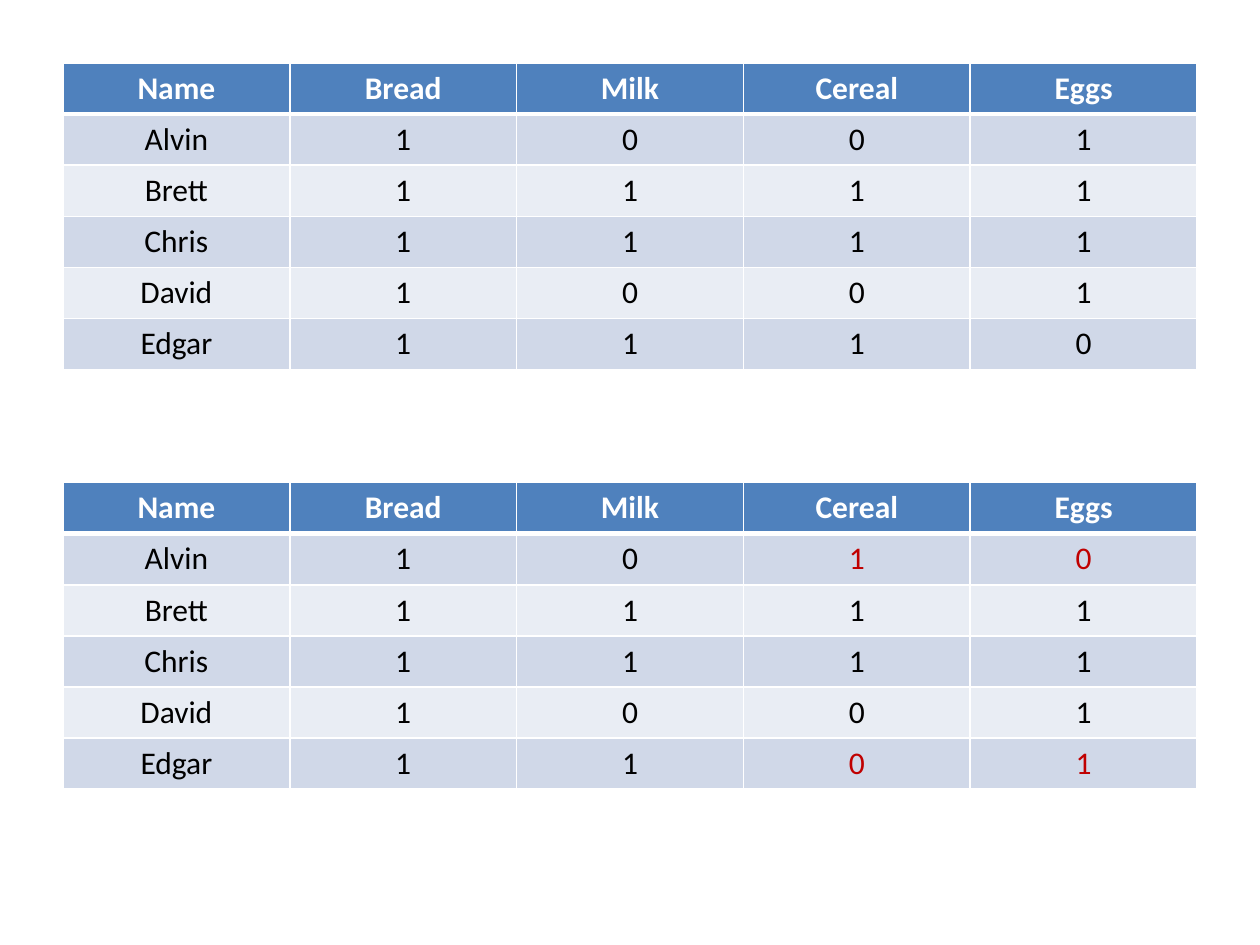
import pptx
import pptx.dml.color
import pptx.enum.text
import pptx.oxml.ns
import pptx.util
from lxml import etree

HEADINGS = ["Name", "Bread", "Milk", "Cereal", "Eggs"]
PURCHASES = [
    ["Alvin", "1", "0", "0", "1"],
    ["Brett", "1", "1", "1", "1"],
    ["Chris", "1", "1", "1", "1"],
    ["David", "1", "0", "0", "1"],
    ["Edgar", "1", "1", "1", "0"],
]
SWAPPED = [
    ["Alvin", "1", "0", "1", "0"],
    *PURCHASES[1:4],
    ["Edgar", "1", "1", "0", "1"],
]
TABLES = [(0.5, PURCHASES), (3.83, SWAPPED)]
LEFT, COLUMN_WIDTH, ROW_HEIGHT = 0.5, 1.8, 0.405
HEADER_FILL, BAND_FILLS = "4F81BD", ["D0D8E8", "E9EDF4"]
WHITE, BLACK, CHANGED = "FFFFFF", "000000", "C00000"


def paint(target, color):
    target.rgb = pptx.dml.color.RGBColor.from_string(color)


def add_borders(cell, widths):
    properties = cell._tc.get_or_add_tcPr()
    qn = pptx.oxml.ns.qn
    for side, points in zip("LRTB", widths):
        line = etree.SubElement(properties, qn(f"a:ln{side}"), w=str(pptx.util.Pt(points)))
        fill = etree.SubElement(line, qn("a:solidFill"))
        etree.SubElement(fill, qn("a:srgbClr"), val=WHITE)


def format_cell(cell, text, fill, color, bold, borders):
    add_borders(cell, borders)
    cell.fill.solid()
    paint(cell.fill.fore_color, fill)
    cell.text_frame.text = text
    para = cell.text_frame.paragraphs[0]
    para.alignment = pptx.enum.text.PP_ALIGN.CENTER
    font = para.runs[0].font
    font.name, font.size, font.bold = "Calibri", pptx.util.Pt(18), bold
    paint(font.color, color)


def add_purchase_table(page, top, people):
    inches = pptx.util.Inches
    rows = [HEADINGS, *people]
    table = page.shapes.add_table(
        len(rows), len(HEADINGS), inches(LEFT), inches(top),
        inches(COLUMN_WIDTH * len(HEADINGS)), inches(ROW_HEIGHT * len(rows)),
    ).table
    for row_index, values in enumerate(rows):
        header = row_index == 0
        fill = HEADER_FILL if header else BAND_FILLS[(row_index - 1) % 2]
        borders = (1, 1, 3 if row_index == 1 else 1, 3 if header else 1)
        for column, text in enumerate(values):
            if header:
                color = WHITE
            else:
                color = BLACK if text == PURCHASES[row_index - 1][column] else CHANGED
            format_cell(table.cell(row_index, column), text, fill, color, header, borders)


def main():
    deck = pptx.Presentation()
    deck.slide_width = pptx.util.Inches(10)
    deck.slide_height = pptx.util.Inches(7.5)
    page = deck.slides.add_slide(deck.slide_layouts[6])
    for top, people in TABLES:
        add_purchase_table(page, top, people)
    deck.save("out.pptx")


if __name__ == "__main__":
    main()
